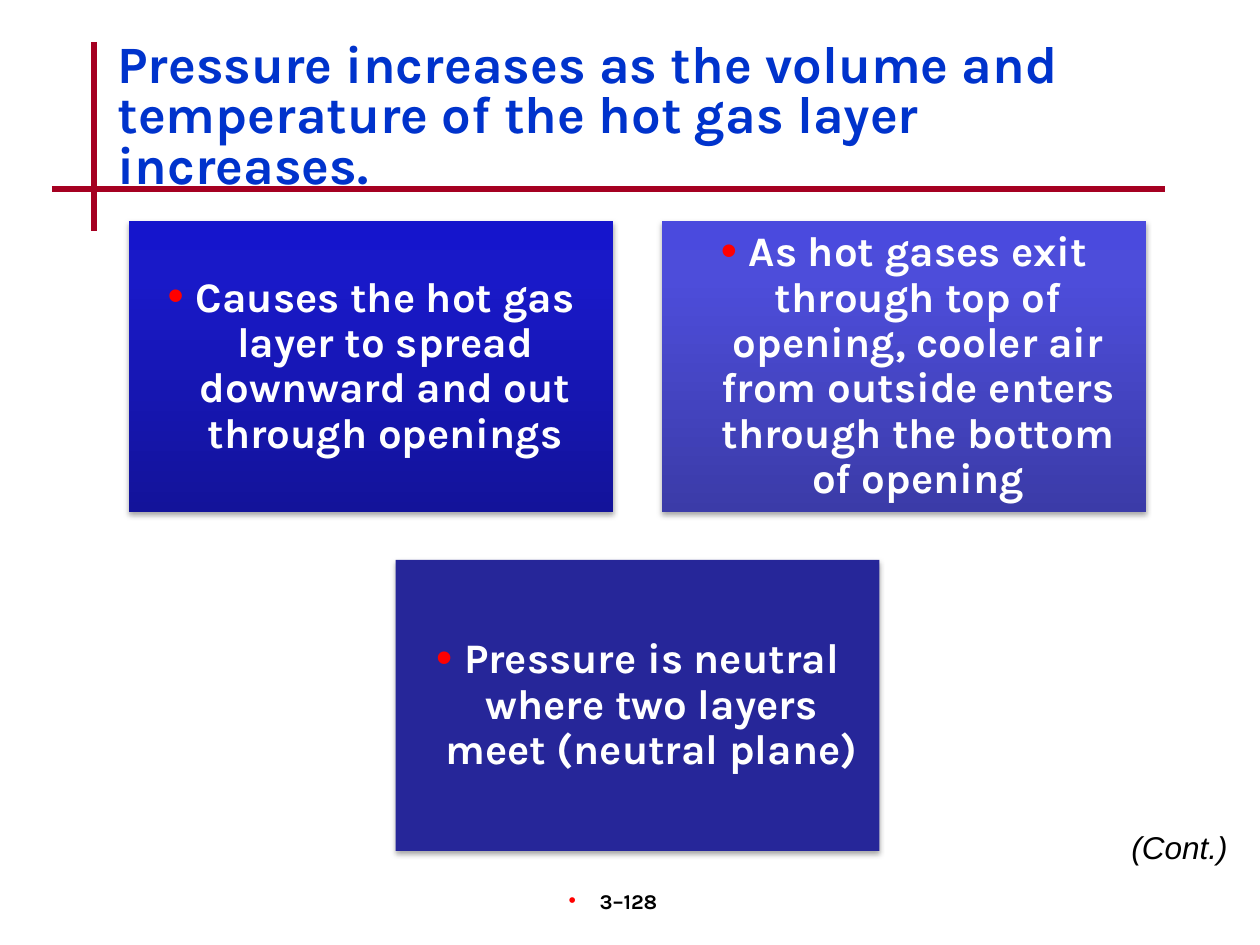
from lxml import etree
from pptx import Presentation, util as u
from pptx.dml.color import RGBColor
from pptx.enum import shapes, text
from pptx.oxml import parse_xml
from pptx.oxml.ns import nsdecls, qn

PX = u.Inches(1) / 126
WIDTH, HEIGHT = 1260, 945
RED, CRIMSON, BLUE, WHITE, BLACK = "FF0000", "A50021", "0033CC", "FFFFFF", "000000"
CARD_W, CARD_H, CARD_GAP = 484, 291, 49


def px(length):
    return u.Emu(round(length * PX))


def colour(code):
    return RGBColor.from_string(code)


def set_bullet(paragraph, hang, size=100):
    """Hang a red bullet to the left of the paragraph."""
    props = paragraph._p.get_or_add_pPr()
    props.set("marL", str(px(hang)))
    props.set("indent", str(-px(hang)))
    bullet_colour = etree.SubElement(props, qn("a:buClr"))
    etree.SubElement(bullet_colour, qn("a:srgbClr"), val=RED)
    etree.SubElement(props, qn("a:buSzPct"), val=str(size * 1000))
    etree.SubElement(props, qn("a:buFont"), typeface="Arial")
    etree.SubElement(props, qn("a:buChar"), char="•")


def write(shape, words, size, code, frame=None, para=None, font=None, bullet=None):
    """Fill a shape with one paragraph, formatted from dicts."""
    body = shape.text_frame
    paragraph = body.paragraphs[0]
    paragraph.text = words
    if bullet:
        set_bullet(paragraph, **bullet)
    formats = (
        (body, {"word_wrap": True, **(frame or {})}),
        (paragraph, para or {}),
        (paragraph.runs[0].font, {"name": "Karla", "size": u.Pt(size), "bold": True, **(font or {})}),
    )
    for target, values in formats:
        for key, value in values.items():
            setattr(target, key, value)
    paragraph.runs[0].font.color.rgb = colour(code)


def add_text(slide, box, *args, **kwargs):
    write(slide.shapes.add_textbox(*map(px, box)), *args, **kwargs)


def add_rule(slide, x1, y1, x2, y2):
    rule = slide.shapes.add_connector(shapes.MSO_CONNECTOR.STRAIGHT, *map(px, (x1, y1, x2, y2)))
    rule.line.color.rgb = colour(CRIMSON)
    rule.line.width = u.Pt(3)
    etree.SubElement(rule._element.spPr, qn("a:effectLst"))


def add_header(slide, box, title):
    """Title with the crossed rules around its lower left corner."""
    left, top, width, height = box
    add_rule(slide, left - 11, top + 5, left - 11, top + 194)
    add_rule(slide, left - 53, top + 152, left + 1060, top + 152)
    add_text(slide, box, title, 30, BLUE, para={"line_spacing": 0.8})


def fill_card(card, stops):
    """Solid fill for one colour, upward gradient for (position, colour) stops."""
    if isinstance(stops, str):
        card.fill.solid()
        card.fill.fore_color.rgb = colour(stops)
        return
    marks = "".join(f'<a:gs pos="{pos * 1000}"><a:srgbClr val="{code}"/></a:gs>' for pos, code in stops)
    card._element.spPr.find(qn("a:prstGeom")).addnext(parse_xml(
        f'<a:gradFill {nsdecls("a")} rotWithShape="1"><a:gsLst>{marks}</a:gsLst>'
        '<a:lin ang="16200000" scaled="0"/></a:gradFill>'))


def add_card(slide, box, words, stops):
    card = slide.shapes.add_shape(shapes.MSO_SHAPE.RECTANGLE, *map(px, box))
    fill_card(card, stops)
    card.line.fill.background()
    card._element.spPr.append(parse_xml(
        f'<a:effectLst {nsdecls("a")}><a:outerShdw blurRad="{u.Pt(3.1)}" dist="{u.Pt(1.8)}" '
        'dir="5400000" rotWithShape="0"><a:srgbClr val="000000"><a:alpha val="35000"/>'
        '</a:srgbClr></a:outerShdw></a:effectLst>'))
    insets = {f"margin_{side}": u.Inches(0.1) for side in ("left", "top", "right", "bottom")}
    write(card, words, 24, WHITE,
          frame={"vertical_anchor": text.MSO_ANCHOR.MIDDLE, **insets},
          para={"alignment": text.PP_ALIGN.CENTER, "line_spacing": 0.9},
          bullet={"hang": 28, "size": 110})


def add_cards(slide, left, top, cards):
    """Two cards in a row, the third centred below them."""
    step_x, step_y = CARD_W + CARD_GAP, CARD_H + CARD_GAP - 1
    places = ((0, 0), (1, 0), (0.5, 1))
    for (column, row), (words, stops) in zip(places, cards):
        box = (left + column * step_x, top + row * step_y, CARD_W, CARD_H)
        add_card(slide, box, words, stops)


def add_footer(slide, left, top):
    add_text(slide, (left, top, 262, 63), "3–128", 12, BLACK,
             frame={"margin_left": 0, "margin_right": px(24)},
             para={"alignment": text.PP_ALIGN.CENTER}, bullet={"hang": 31})
    add_text(slide, (left + 535, top - 60, 211, 50), "(Cont.)", 18, BLACK,
             para={"alignment": text.PP_ALIGN.RIGHT},
             font={"name": "Arial", "bold": False, "italic": True})


def main():
    deck = Presentation()
    deck.slide_width, deck.slide_height = px(WIDTH), px(HEIGHT)
    slide = deck.slides.add_slide(deck.slide_layouts[6])
    # Header
    add_header(slide, (105, 37, 1071, 126),
               "Pressure increases as the volume and temperature of the hot gas layer increases.")
    # Effects of rising pressure
    add_cards(slide, 129, 221, (
        ("Causes the hot gas layer to spread downward and out through openings",
         ((0, "13139A"), (80, "1919C8"), (100, "1515CC"))),
        ("As hot gases exit through top of opening, cooler air from outside enters "
         "through the bottom of opening",
         ((0, "3B3BA8"), (80, "4D4DDA"), (100, "4A4ADE"))),
        ("Pressure is neutral where two layers meet (neutral plane)", "262699"),
    ))
    # Page number and continuation mark
    add_footer(slide, 494, 882)
    deck.save("out.pptx")


if __name__ == "__main__":
    main()
